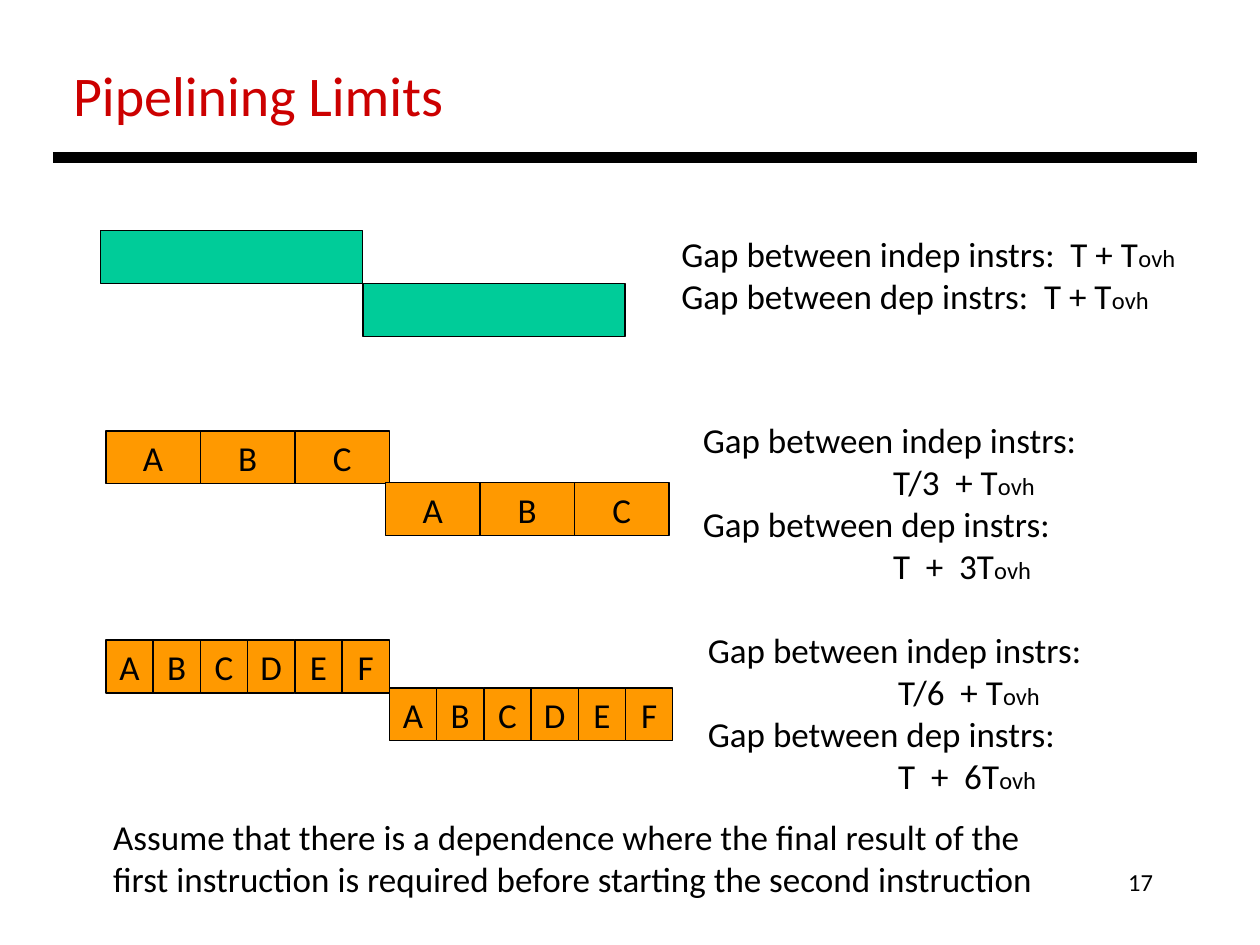
import dataclasses

import pptx
import pptx.dml.color
import pptx.enum.shapes
import pptx.enum.text
import pptx.oxml
import pptx.util

Inches = pptx.util.Inches
Align = pptx.enum.text.PP_ALIGN
Anchor = pptx.enum.text.MSO_ANCHOR
SUBSCRIPT = "ovh"
FORMULA_INDENT = 1.51
STAGE_HEIGHT = 0.42


@dataclasses.dataclass(frozen=True)
class Theme:
    font: str = "Calibri"
    title: str = "CC0000"
    ink: str = "000000"
    unpipelined: str = "00CC99"
    pipelined: str = "FF9900"
    title_size: int = 32
    text_size: int = 20
    small_size: int = 14
    outline: float = 0.75
    rule: float = 6


THEME = Theme()


def color(value):
    return pptx.dml.color.RGBColor.from_string(value)


def place(shape, left, top, width, height):
    shape.left, shape.top = Inches(left), Inches(top)
    shape.width, shape.height = Inches(width), Inches(height)


def format_run(run, size, ink=THEME.ink):
    run.font.name = THEME.font
    run.font.size = pptx.util.Pt(size)
    run.font.color.rgb = color(ink)


def add_title(slide, text):
    title = slide.shapes.title
    place(title, 0.48, 0.43, 3.18, 0.64)
    frame = title.text_frame
    frame.text = text
    frame.word_wrap = False
    frame.vertical_anchor = Anchor.TOP
    frame.paragraphs[0].alignment = Align.LEFT
    format_run(frame.paragraphs[0].runs[0], THEME.title_size, THEME.title)


def add_rule(slide, left, right, top):
    rule = slide.shapes.add_connector(
        pptx.enum.shapes.MSO_CONNECTOR.STRAIGHT,
        Inches(left), Inches(top), Inches(right), Inches(top))
    rule.line.color.rgb = color(THEME.ink)
    rule.line.width = pptx.util.Pt(THEME.rule)
    properties = rule._element.spPr
    properties.append(pptx.oxml.parse_xml(
        '<a:effectLst xmlns:a="http://schemas.openxmlformats.org/drawingml/2006/main"/>'))


def add_stage(slide, left, top, width, label, fill):
    stage = slide.shapes.add_shape(
        pptx.enum.shapes.MSO_SHAPE.RECTANGLE,
        Inches(left), Inches(top), Inches(width), Inches(STAGE_HEIGHT))
    stage.shadow.inherit = False
    stage.fill.solid()
    stage.fill.fore_color.rgb = color(fill)
    stage.line.color.rgb = color(THEME.ink)
    stage.line.width = pptx.util.Pt(THEME.outline)
    if label:
        frame = stage.text_frame
        frame.text = label
        frame.word_wrap = False
        frame.vertical_anchor = Anchor.MIDDLE
        frame.paragraphs[0].alignment = Align.CENTER
        format_run(frame.paragraphs[0].runs[0], THEME.text_size)


def add_instruction(slide, left, top, width, labels, fill):
    """Divide one instruction's duration evenly among its stages."""
    stage_width = width / len(labels)
    for index, label in enumerate(labels):
        add_stage(slide, left + index * stage_width, top, stage_width, label, fill)


def add_text(slide, box, lines, size=THEME.text_size, alignment=Align.LEFT):
    """Write one paragraph per line, with a final "ovh" in small type."""
    text_box = slide.shapes.add_textbox(*map(Inches, box))
    frame = text_box.text_frame
    frame.word_wrap = False
    frame.text = "\n".join(line.removesuffix(SUBSCRIPT) for line in lines)
    for paragraph, line in zip(frame.paragraphs, lines):
        paragraph.alignment = alignment
        format_run(paragraph.runs[0], size)
        if line.endswith(SUBSCRIPT):
            run = paragraph.add_run()
            run.text = SUBSCRIPT
            format_run(run, THEME.small_size)
    return frame


def add_gaps(slide, left, top, stages):
    """State both gaps, each formula indented below its heading."""
    frame = add_text(slide, (left, top, 3.26, 1.45), [
        "Gap between indep instrs:", f"T/{stages}  + Tovh",
        "Gap between dep instrs:", f"T  +  {stages}Tovh"])
    for paragraph in frame.paragraphs[1::2]:
        paragraph._p.get_or_add_pPr().set("marL", str(Inches(FORMULA_INDENT)))


def main():
    presentation = pptx.Presentation()
    presentation.slide_width, presentation.slide_height = Inches(10), Inches(7.5)
    slide = presentation.slides.add_slide(presentation.slide_layouts[5])

    add_title(slide, "Pipelining Limits")
    add_rule(slide, 0.42, 9.5, 1.25)

    pipelines = [
        ([""], 2.08, THEME.unpipelined, [(0.8, 1.83), (2.88, 2.25)]),
        ("ABC", 2.25, THEME.pipelined, [(0.84, 3.42), (3.06, 3.83)]),
        ("ABCDEF", 2.25, THEME.pipelined, [(0.84, 5.08), (3.09, 5.46)]),
    ]
    for labels, width, fill, starts in pipelines:
        for left, top in starts:
            add_instruction(slide, left, top, width, labels, fill)

    add_text(slide, (0.8, 6.42, 7.58, 0.77), [
        "Assume that there is a dependence where the final result of the",
        "first instruction is required before starting the second instruction"])
    add_text(slide, (5.31, 1.8, 4.16, 0.77), [
        "Gap between indep instrs:  T + Tovh",
        "Gap between dep instrs:  T + Tovh"])
    add_gaps(slide, 5.48, 3.27, stages=3)
    add_gaps(slide, 5.52, 4.94, stages=6)
    add_text(slide, (7.17, 6.83, 2.08, 0.5), ["17"], THEME.small_size, Align.RIGHT)

    presentation.save("out.pptx")


if __name__ == "__main__":
    main()
